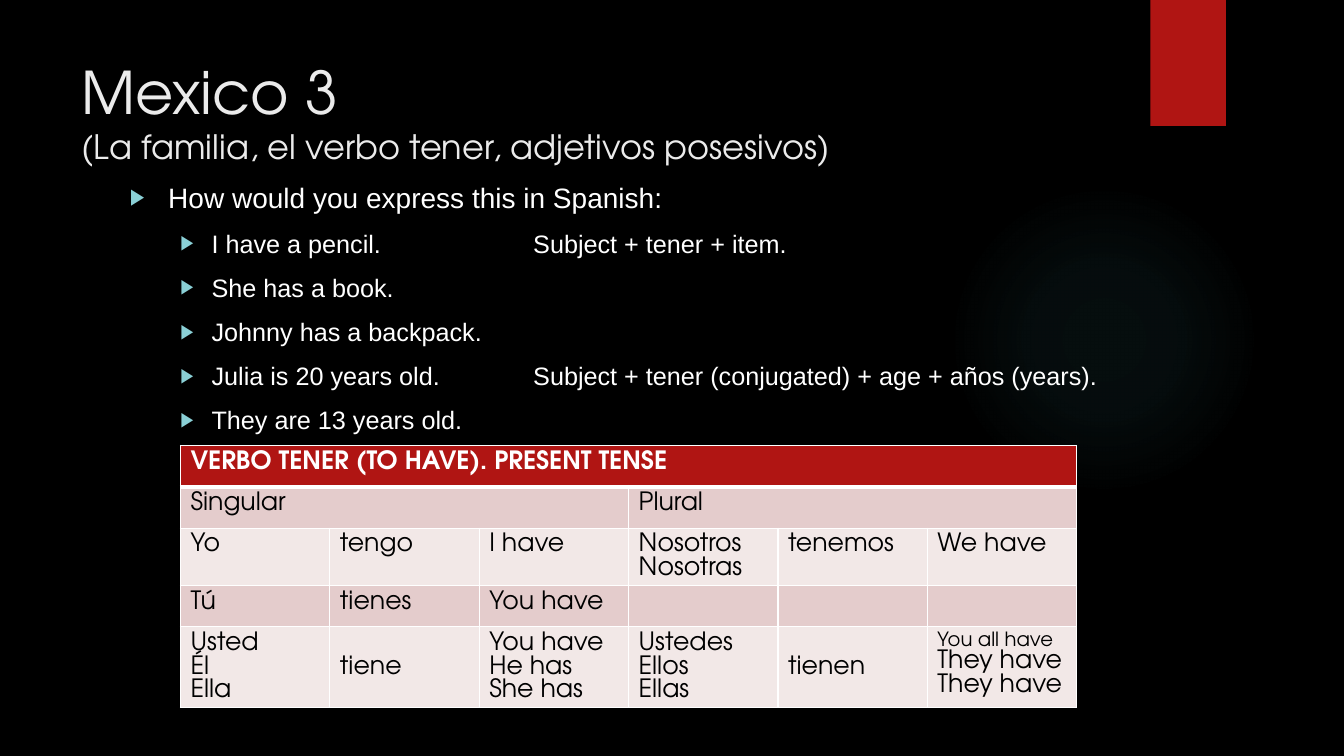
from dataclasses import dataclass

from lxml.etree import SubElement
from pptx import Presentation
from pptx.dml.color import RGBColor
from pptx.enum.shapes import MSO_SHAPE as Preset
from pptx.enum.text import MSO_ANCHOR as Anchor
from pptx.oxml.ns import qn
from pptx.util import Inches, Pt


@dataclass(frozen=True)
class Theme:
    heading_font: str = "TeX Gyre Adventor"
    body_font: str = "Arial"
    background: str = "000000"
    red: str = "B01513"
    teal: str = "50B9C1"
    bullet: str = "8AD0D6"
    title: str = "EBEBEB"
    white: str = "FFFFFF"
    black: str = "000000"
    dark_band: str = "E4CCCC"
    light_band: str = "F2E8E7"
    title_size: int = 42
    subtitle_size: int = 24
    question_size: int = 20
    text_size: int = 18
    small_size: int = 14


THEME = Theme()

QUESTION = "How would you express this in Spanish:"
SENTENCES = [
    "I have a pencil.\t\t\t\tSubject + tener + item.",
    "She has a book.",
    "Johnny has a backpack.",
    "Julia is 20 years old. \t\tSubject + tener (conjugated) + age + años (years).",
    "They are 13 years old.",
]
VERB_ROWS = [
    ["VERBO TENER (TO HAVE). PRESENT TENSE", "", "", "", "", ""],
    ["Singular", "", "", "Plural", "", ""],
    ["Yo", "tengo", "I have", "Nosotros\nNosotras", "tenemos", "We have"],
    ["Tú", "tienes", "You have", "", "", ""],
    ["Usted\nÉl\nElla", "tiene", "You have\nHe has\nShe has",
     "Ustedes\nEllos\nEllas", "tienen", "You all have\nThey have\nThey have"],
]
ROW_HEIGHTS = [0.41, 0.41, 0.57, 0.41, 0.8]
MERGES = [(0, 0, 5), (1, 0, 2), (1, 3, 5)]


def style_run(run, font, size, color, bold=False):
    run.font.name = font
    run.font.size = Pt(size)
    run.font.color.rgb = RGBColor.from_string(color)
    run.font.bold = bold


def add_shape(page, preset, left, top, width, height, color):
    shape = page.shapes.add_shape(
        preset, Inches(left), Inches(top), Inches(width), Inches(height))
    shape.shadow.inherit = False
    shape.line.fill.background()
    shape.fill.solid()
    shape.fill.fore_color.rgb = RGBColor.from_string(color)
    return shape


def add_glow(page):
    glow = add_shape(page, Preset.OVAL, 9.41, 1.83, 3.08, 3.08, THEME.teal)
    glow.fill.gradient()
    gradient = glow.fill._xPr.find(qn("a:gradFill"))
    for child in list(gradient):
        gradient.remove(child)
    stops = SubElement(gradient, qn("a:gsLst"))
    for position, opacity in [(0, 7), (36, 6), (69, 0), (100, 0)]:
        stop = SubElement(stops, qn("a:gs"), pos=str(position * 1000))
        color = SubElement(stop, qn("a:srgbClr"), val=THEME.teal)
        SubElement(color, qn("a:alpha"), val=str(opacity * 1000))
    circle = SubElement(gradient, qn("a:path"), path="circle")
    SubElement(circle, qn("a:fillToRect"), l="50000", t="50000", r="50000", b="50000")


def add_text_box(page, left, top, width, height, text):
    box = page.shapes.add_textbox(
        Inches(left), Inches(top), Inches(width), Inches(height))
    box.text_frame.word_wrap = True
    box.text_frame.vertical_anchor = Anchor.TOP
    box.text_frame.text = text
    return box


def add_title(page):
    box = add_text_box(page, 0.71, 0.5, 10.29, 1.53,
                       "Mexico 3\v(La familia, el verbo tener, adjetivos posesivos)")
    sizes = [THEME.title_size, THEME.subtitle_size]
    for run, size in zip(box.text_frame.paragraphs[0].runs, sizes):
        style_run(run, THEME.heading_font, size, THEME.title)


def set_bullet(para, margin, hanging):
    properties = para._p.get_or_add_pPr()
    properties.set("marL", str(Inches(margin)))
    properties.set("indent", str(-Inches(hanging)))
    properties.set("defTabSz", str(Inches(0.5)))
    color = SubElement(properties, qn("a:buClr"))
    SubElement(color, qn("a:srgbClr"), val=THEME.bullet)
    SubElement(properties, qn("a:buSzPct"), val="80000")
    SubElement(properties, qn("a:buFont"), typeface=THEME.body_font)
    SubElement(properties, qn("a:buChar"), char="▶")


def add_questions(page):
    box = add_text_box(page, 1.19, 1.74, 10.29, 4.81, "\n".join([QUESTION] + SENTENCES))
    for index, para in enumerate(box.text_frame.paragraphs):
        if index == 0:
            size, spacing, margin, hanging = THEME.question_size, 24, 0.38, 0.38
        else:
            size, spacing, margin, hanging = THEME.text_size, 21.5, 0.81, 0.31
            para.level = 1
            para.space_before = Pt(10)
        para.line_spacing = Pt(spacing)
        set_bullet(para, margin, hanging)
        for run in para.runs:
            style_run(run, THEME.body_font, size, THEME.white)


def set_borders(cell, row):
    properties = cell._tc.get_or_add_tcPr()
    widths = {"lnL": 1, "lnR": 1, "lnT": 3 if row == 1 else 1, "lnB": 3 if row == 0 else 1}
    for side, width in widths.items():
        line = SubElement(properties, qn(f"a:{side}"), w=str(Pt(width)))
        fill = SubElement(line, qn("a:solidFill"))
        SubElement(fill, qn("a:srgbClr"), val=THEME.white)


def fill_cell(cell, row, text):
    header = row == 0
    band = THEME.dark_band if row % 2 else THEME.light_band
    set_borders(cell, row)
    cell.fill.solid()
    cell.fill.fore_color.rgb = RGBColor.from_string(THEME.red if header else band)
    cell.text_frame.text = text
    cell.vertical_anchor = Anchor.MIDDLE if text in ("tiene", "tienen") else Anchor.TOP
    for para in cell.text_frame.paragraphs:
        small = para.text == "You all have"
        size = THEME.small_size if small else THEME.text_size
        para.line_spacing = Pt(13 if small else 16.8)
        for run in para.runs:
            style_run(run, THEME.heading_font, size,
                      THEME.white if header else THEME.black, header)


def add_verb_table(page):
    frame = page.shapes.add_table(
        len(VERB_ROWS), len(VERB_ROWS[0]),
        Inches(1.79), Inches(4.42), Inches(8.89), Inches(sum(ROW_HEIGHTS)))
    table = frame.table
    for row, texts in enumerate(VERB_ROWS):
        table.rows[row].height = Inches(ROW_HEIGHTS[row])
        for column, text in enumerate(texts):
            fill_cell(table.cell(row, column), row, text)
    for row, first, last in MERGES:
        table.cell(row, first).merge(table.cell(row, last))


def main():
    deck = Presentation()
    deck.slide_width, deck.slide_height = Inches(13.33), Inches(7.5)
    page = deck.slides.add_slide(deck.slide_layouts[6])
    page.background.fill.solid()
    page.background.fill.fore_color.rgb = RGBColor.from_string(THEME.background)
    add_glow(page)
    add_shape(page, Preset.RECTANGLE, 11.41, 0, 0.75, 1.25, THEME.red)
    add_title(page)
    add_questions(page)
    add_verb_table(page)
    deck.save("out.pptx")


if __name__ == "__main__":
    main()
